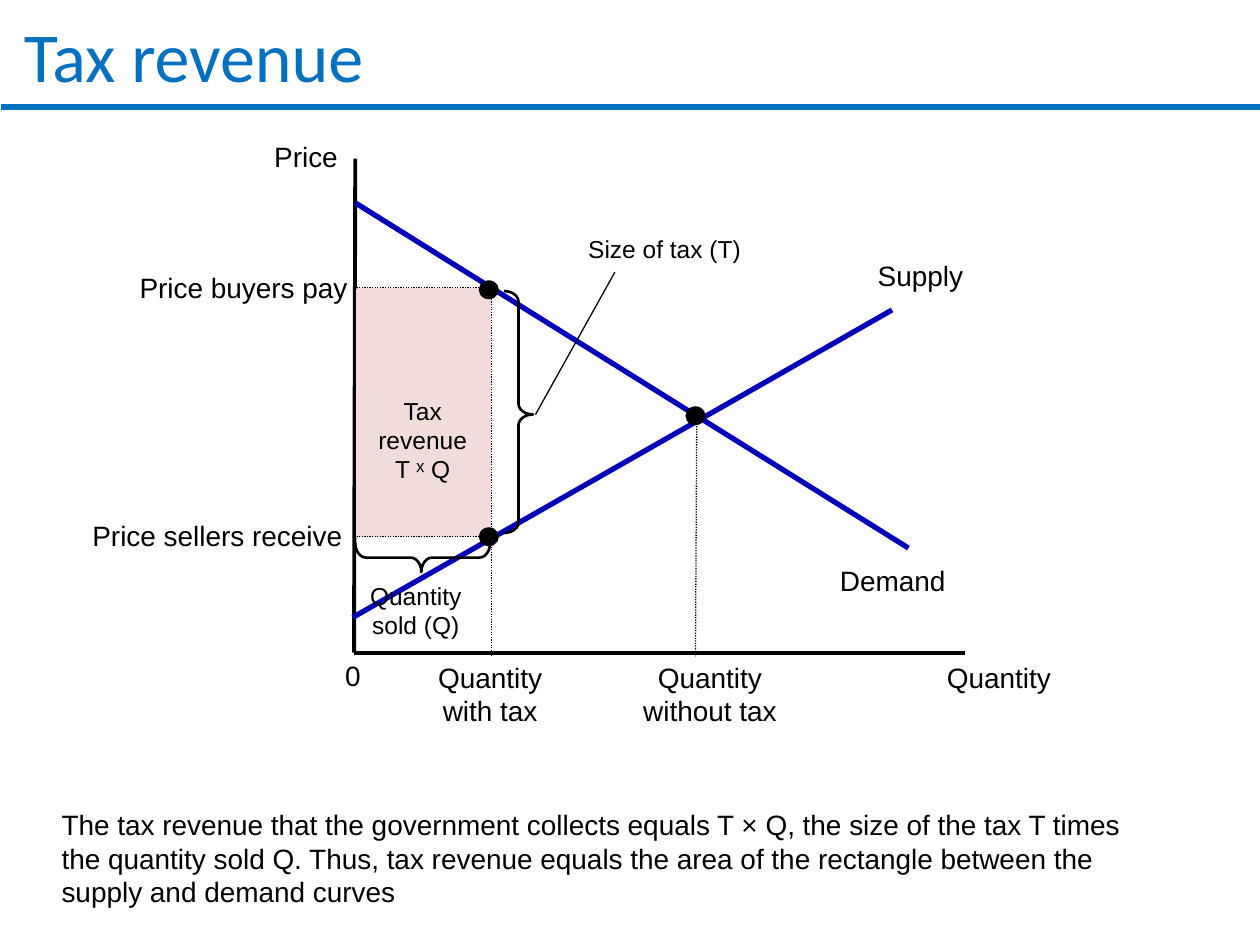
from lxml.etree import SubElement
from pptx import Presentation
from pptx.dml.color import RGBColor
from pptx.enum.dml import MSO_LINE
from pptx.enum.shapes import MSO_CONNECTOR, MSO_SHAPE
from pptx.enum.text import MSO_AUTO_SIZE, PP_ALIGN
from pptx.oxml.ns import qn
from pptx.util import Inches, Pt

BLACK, WHITE, CURVE, TITLE, TAX = "000000", "FFFFFF", "0000B8", "0070C0", "F2DCDB"
LEFT, CENTER, RIGHT = PP_ALIGN.LEFT, PP_ALIGN.CENTER, PP_ALIGN.RIGHT
AXIS_X, AXIS_Y = 2.82, 5.18
TAX_QUANTITY, FREE_QUANTITY = 3.9, 5.52
BUYER_PRICE, SELLER_PRICE, FREE_PRICE = 2.28, 4.26, 3.3


def color(hex_value):
    """Turn a hex string into a colour."""
    return RGBColor.from_string(hex_value)


def add_line(slide, start, end, width=0.75, line_color=BLACK, dash=None):
    """Draw a straight line between two points."""
    points = [Inches(value) for value in (*start, *end)]
    connector = slide.shapes.add_connector(MSO_CONNECTOR.STRAIGHT, *points)
    connector.line.color.rgb = color(line_color)
    for name, value in {"width": Pt(width), "dash_style": dash}.items():
        setattr(connector.line, name, value)
    SubElement(connector._element.spPr, qn("a:effectLst"))


def add_guide(slide, start, end):
    """Draw a dotted guide line."""
    add_line(slide, start, end, dash=MSO_LINE.ROUND_DOT)


def add_text(slide, box, lines, align=CENTER, size=16, font="Arial",
             text_color=BLACK, wrap=False, top_margin=0.05):
    """Place a text box with one paragraph per line."""
    frame = slide.shapes.add_textbox(*map(Inches, box)).text_frame
    settings = {"word_wrap": wrap, "auto_size": MSO_AUTO_SIZE.NONE,
                "margin_top": Inches(top_margin)}
    for name, value in settings.items():
        setattr(frame, name, value)
    frame.text = "\n".join(lines)
    for paragraph in frame.paragraphs:
        paragraph.alignment = align
        for name, value in {"size": Pt(size), "name": font}.items():
            setattr(paragraph.font, name, value)
        paragraph.font.color.rgb = color(text_color)


def add_shape(slide, kind, box, fill=None, line=None, width=2):
    """Draw a preset shape without a shadow."""
    shape = slide.shapes.add_shape(kind, *map(Inches, box))
    shape.shadow.inherit = False
    if fill:
        shape.fill.solid()
        shape.fill.fore_color.rgb = color(fill)
    else:
        shape.fill.background()
    if line:
        shape.line.color.rgb = color(line)
        shape.line.width = Pt(width)
    else:
        shape.line.fill.background()
    return shape


def add_brace(slide, box, rotation):
    """Draw a rotated curly brace."""
    brace = add_shape(slide, MSO_SHAPE.LEFT_BRACE, box, line=BLACK, width=1.5)
    brace.rotation = rotation
    for index, value in enumerate((0.37, 0.49)):
        brace.adjustments[index] = value


def add_dot(slide, x, y, width=0.16, height=0.15):
    """Mark a point on the curves."""
    box = (x - width / 2, y - height / 2, width, height)
    add_shape(slide, MSO_SHAPE.OVAL, box, fill=BLACK)


def add_header(slide):
    """Add the title and the rule below it."""
    add_line(slide, (0.01, 0.85), (10, 0.85), 3, TITLE)
    add_text(slide, (0.09, 0.02, 9.91, 0.58), ["Tax revenue"], LEFT, 40,
             "Calibri", TITLE, wrap=True, top_margin=0.08)


def add_axes(slide):
    """Add the plot area, the axes and their labels."""
    add_shape(slide, MSO_SHAPE.RECTANGLE, (AXIS_X, 1.34, 4.84, 3.83), WHITE, WHITE)
    add_line(slide, (AXIS_X, 1.26), (2.81, AXIS_Y), 2.25)
    add_line(slide, (2.81, AXIS_Y), (7.66, AXIS_Y), 2.25)
    add_text(slide, (1.97, 1.06, 0.81, 0.37), ["Price"], RIGHT, wrap=True)
    add_text(slide, (7.08, 5.19, 1.36, 0.37), ["Quantity"], RIGHT, wrap=True)
    add_text(slide, (2.64, 5.18, 0.33, 0.37), ["0"], LEFT)


def add_curves(slide):
    """Add the demand and supply curves with their equilibrium."""
    add_line(slide, (AXIS_X, 1.61), (7.21, 4.35), 3, CURVE)
    add_text(slide, (6.56, 4.42, 1.05, 0.37), ["Demand"])
    add_line(slide, (2.8, 4.9), (7.08, 2.46), 3, CURVE)
    add_text(slide, (6.86, 2, 0.89, 0.37), ["Supply"])
    add_dot(slide, FREE_QUANTITY, FREE_PRICE)


def add_quantities(slide):
    """Add the guides and labels along the quantity axis."""
    add_guide(slide, (TAX_QUANTITY, 2.27), (TAX_QUANTITY, 5.21))
    add_text(slide, (3.37, 5.19, 1.04, 0.64), ["Quantity", "with tax"])
    add_guide(slide, (5.53, 3.28), (FREE_QUANTITY, 5.21))
    add_text(slide, (5, 5.19, 1.27, 0.64), ["Quantity", "without tax"])


def add_tax_area(slide):
    """Add the revenue rectangle, its braces, prices and corner dots."""
    add_text(slide, (4.54, 1.81, 1.47, 0.34), ["Size of tax (T)"], size=14)
    add_brace(slide, (4, 2.31, 0.23, 1.92), 180)
    add_line(slide, (4.25, 3.29), (4.88, 2.16))
    add_text(slide, (2.8, 4.56, 1, 0.57), ["Quantity sold (Q)"], size=14, wrap=True)
    add_brace(slide, (3.24, 3.89, 0.23, 1.07), 270)
    add_shape(slide, MSO_SHAPE.RECTANGLE, (2.84, 2.3, 1.04, 1.95), TAX, TAX)
    add_text(slide, (2.83, 3.09, 1.05, 0.81), ["Tax", "revenue", "T ˣ Q"],
             size=14, wrap=True)
    for price in (BUYER_PRICE, SELLER_PRICE):
        add_guide(slide, (2.83, price), (TAX_QUANTITY, price))
    add_text(slide, (1.01, 2.1, 1.87, 0.37), ["Price buyers pay"], LEFT)
    add_text(slide, (0.62, 4.07, 2.21, 0.37), ["Price sellers receive"])
    for y in (2.3, SELLER_PRICE):
        add_dot(slide, 3.88, y)


def add_explanation(slide):
    """Add the explanation below the diagram."""
    explanation = (
        "The tax revenue that the government collects equals T × Q, the size of "
        "the tax T times the quantity sold Q. Thus, tax revenue equals the area "
        "of the rectangle between the supply and demand curves")
    add_text(slide, (0.39, 6.36, 8.88, 0.91), [explanation], LEFT, wrap=True)


def main():
    """Build the slide and save it."""
    presentation = Presentation()
    presentation.slide_width = Inches(10)
    presentation.slide_height = Inches(7.5)
    slide = presentation.slides.add_slide(presentation.slide_layouts[6])
    for add_part in (add_header, add_axes, add_curves, add_quantities,
                     add_tax_area, add_explanation):
        add_part(slide)
    presentation.save("out.pptx")


if __name__ == "__main__":
    main()
